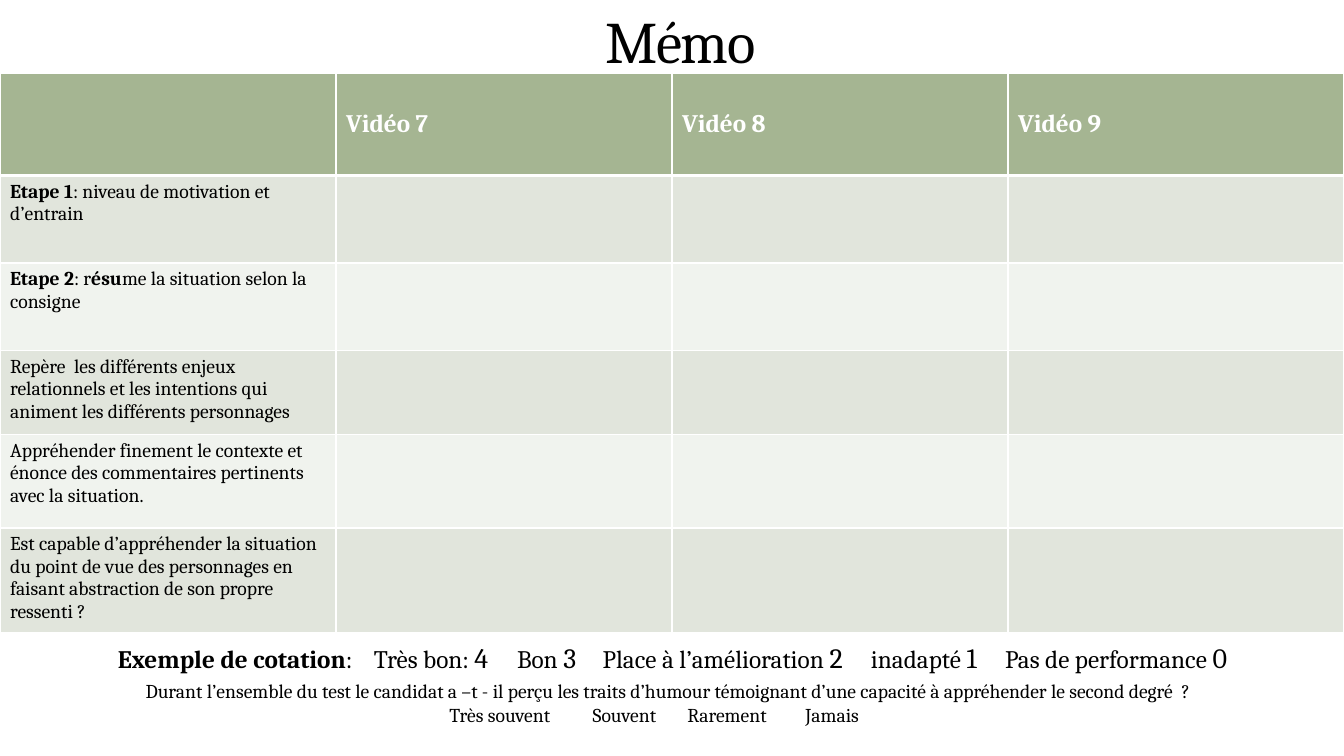
from lxml.etree import SubElement
from pptx import Presentation
from pptx.dml.color import RGBColor
from pptx.enum.text import MSO_ANCHOR as Anchor, PP_ALIGN as Align
from pptx.oxml import parse_xml
from pptx.oxml.ns import nsdecls, qn
from pptx.util import Inches, Pt

BLACK = RGBColor(0, 0, 0)
WHITE = RGBColor(255, 255, 255)
HEADER_GREEN = RGBColor(0xA5, 0xB5, 0x92)
BAND_DARK = RGBColor(0xE1, 0xE5, 0xDC)
BAND_LIGHT = RGBColor(0xF0, 0xF3, 0xEE)
OUTLINE = RGBColor(0xE0, 0xDD, 0xB1)
FONT = "Cambria"

ROW_HEIGHTS = [1.01, 0.87, 0.87, 0.83, 0.93, 1.03]
HEADINGS = ["", "Vidéo 7", "Vidéo 8", "Vidéo 9"]
CRITERIA = [
    [("Etape 1", True), (": niveau de motivation et d’entrain", False)],
    [("Etape 2", True), (": r", False), ("ésu", True),
     ("me la situation selon la consigne", False)],
    [("Repère  les différents enjeux relationnels et les intentions qui "
      "animent les différents personnages", False)],
    [("Appréhender finement le contexte et énonce des commentaires pertinents "
      "avec la situation.", False)],
    [("Est capable d’appréhender la situation du point de vue des personnages "
      "en faisant abstraction de son propre ressenti ?", False)],
]
SCORES = [("Très bon: ", "4"), ("Bon ", "3"), ("Place à l’amélioration ", "2"),
          ("inadapté ", "1"), ("Pas de performance ", "0")]
SCORE_TABS = [2.54, 3.96, 4.81, 7.47, 8.8]
HUMOUR_QUESTION = ("Durant l’ensemble du test le candidat a –t - il perçu les traits "
                   "d’humour témoignant d’une capacité à appréhender le second degré  ?")
FREQUENCIES = ["Très souvent", "Souvent", "Rarement", "Jamais"]
FREQUENCY_TABS = [1.42, 2.36, 3.53]


def add_run(paragraph, text, size, color=BLACK, bold=False):
    """Append a formatted run to a paragraph."""
    run = paragraph.add_run()
    run.text = text
    run.font.name = FONT
    run.font.size = Pt(size)
    run.font.bold = bold
    run.font.color.rgb = color
    return run


def add_text_box(slide, left, top, width, height, align=Align.LEFT):
    """Add a wrapping text box and return its text frame."""
    frame = slide.shapes.add_textbox(
        Inches(left), Inches(top), Inches(width), Inches(height)).text_frame
    frame.word_wrap = True
    frame.paragraphs[0].alignment = align
    return frame


def add_tabs(paragraph, positions):
    """Give a paragraph left tab stops at positions in inches."""
    tabs = SubElement(paragraph._p.get_or_add_pPr(), qn("a:tabLst"))
    for position in positions:
        SubElement(tabs, qn("a:tab"), pos=str(Inches(position)), algn="l")


def add_title(slide, left, top, width, height):
    """Add the slide title with its faint letter outline."""
    frame = add_text_box(slide, left, top, width, height, Align.CENTER)
    frame.vertical_anchor = Anchor.BOTTOM
    properties = add_run(frame.paragraphs[0], "Mémo", 42)._r.get_or_add_rPr()
    properties.set("spc", "-100")
    properties.insert(0, parse_xml(
        f'<a:ln {nsdecls("a")} w="3175"><a:solidFill><a:srgbClr val="{OUTLINE}">'
        '<a:alpha val="25000"/></a:srgbClr></a:solidFill></a:ln>'))


def style_cell(cell, color, bottom_width):
    """Fill a cell and draw its white borders."""
    properties = cell._tc.get_or_add_tcPr()
    for side, width in (("L", 1), ("R", 1), ("T", 1), ("B", bottom_width)):
        properties.append(parse_xml(
            f'<a:ln{side} {nsdecls("a")} w="{Pt(width)}"><a:solidFill>'
            f'<a:srgbClr val="{WHITE}"/></a:solidFill></a:ln{side}>'))
    cell.fill.solid()
    cell.fill.fore_color.rgb = color


def add_criteria_table(slide, left, top, width):
    """Add the grid of criteria against videos."""
    table = slide.shapes.add_table(
        len(ROW_HEIGHTS), len(HEADINGS), Inches(left), Inches(top),
        Inches(width), Inches(sum(ROW_HEIGHTS))).table
    for column in table.columns:
        column.width = Inches(width / len(HEADINGS))
    for index, height in enumerate(ROW_HEIGHTS):
        table.rows[index].height = Inches(height)
        band = BAND_DARK if index % 2 else BAND_LIGHT
        for cell in table.rows[index].cells:
            style_cell(cell, band if index else HEADER_GREEN, 1 if index else 3)
    for cell, heading in zip(table.rows[0].cells, HEADINGS):
        cell.vertical_anchor = Anchor.MIDDLE
        if heading:
            add_run(cell.text_frame.paragraphs[0], heading, 18, WHITE, True)
    for index, criterion in enumerate(CRITERIA, 1):
        paragraph = table.cell(index, 0).text_frame.paragraphs[0]
        for text, bold in criterion:
            add_run(paragraph, text, 14, bold=bold)


def add_score_scale(slide, left, top, width, height):
    """Add the line that explains the scores."""
    paragraph = add_text_box(slide, left, top, width, height).paragraphs[0]
    add_tabs(paragraph, SCORE_TABS)
    add_run(paragraph, "Exemple de cotation", 18, bold=True)
    add_run(paragraph, ":", 18)
    for label, score in SCORES:
        add_run(paragraph, "\t" + label, 18)
        add_run(paragraph, score, 20)


def add_humour_question(slide, left, top, width, height):
    """Add the closing question and its possible answers."""
    question = add_text_box(slide, left, top, width, height, Align.CENTER)
    add_run(question.paragraphs[0], HUMOUR_QUESTION, 14)
    answers = add_text_box(slide, left + 4.36, top + 0.23, 4.6, height)
    add_tabs(answers.paragraphs[0], FREQUENCY_TABS)
    add_run(answers.paragraphs[0], "\t".join(FREQUENCIES), 14)


def main():
    """Build and save the memo slide."""
    presentation = Presentation()
    presentation.slide_width = Inches(13.33)
    presentation.slide_height = Inches(7.5)
    slide = presentation.slides.add_slide(presentation.slide_layouts[6])
    add_title(slide, 0.75, -0.53, 12, 1.33)
    add_score_scale(slide, 1.07, 6.31, 11.5, 0.44)
    add_criteria_table(slide, 0, 0.73, 13.33)
    add_humour_question(slide, 0, 6.69, 13.26, 0.34)
    presentation.save("out.pptx")


if __name__ == "__main__":
    main()
